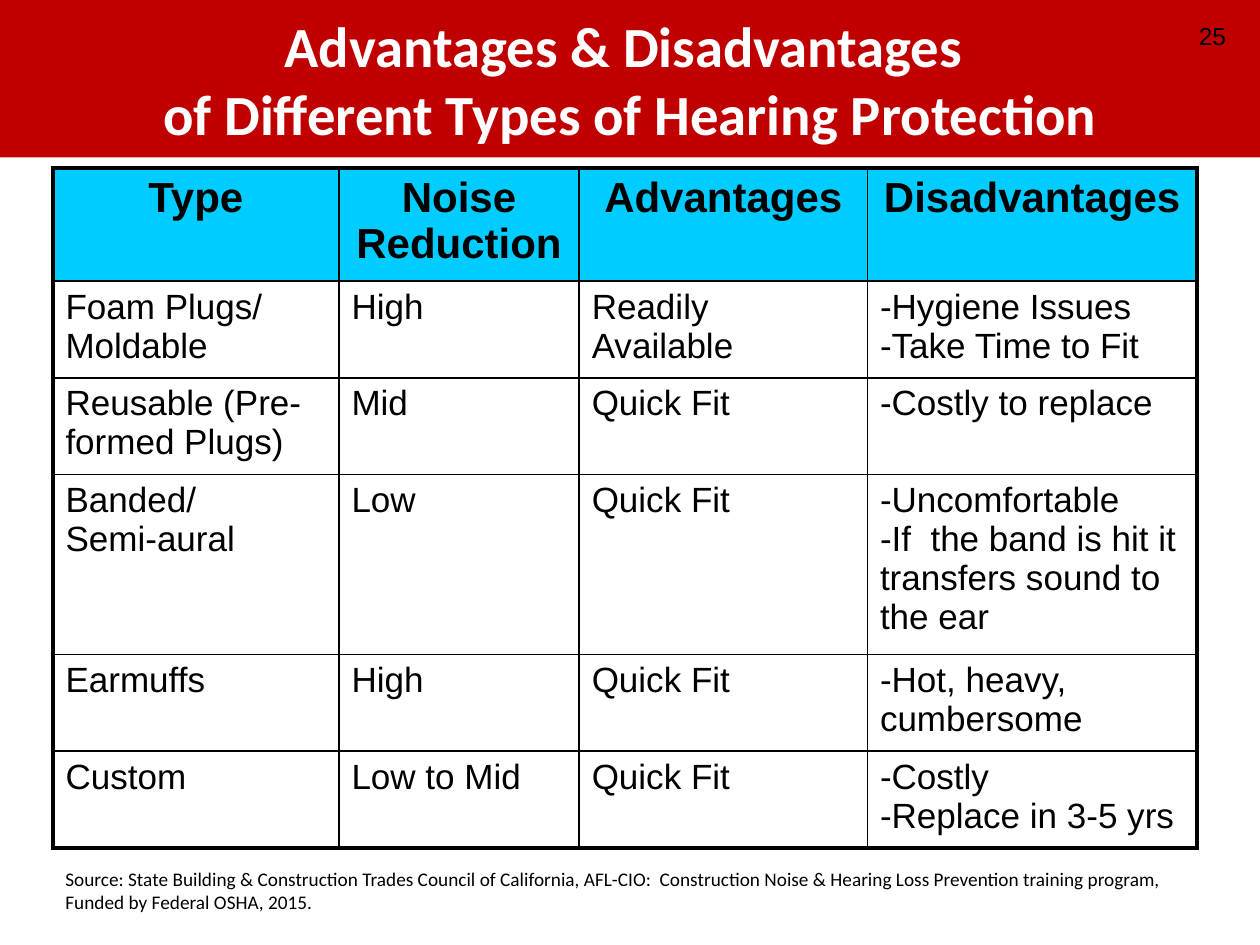
from dataclasses import dataclass

from lxml import etree
from pptx import Presentation
from pptx import util as u
from pptx.dml.color import RGBColor
from pptx.enum import shapes, text
from pptx.oxml.ns import qn

SLIDE_WIDTH = u.Inches(10)
SLIDE_HEIGHT = u.Inches(7.5)


@dataclass(frozen=True)
class Theme:
    banner: str = "C00000"
    header: str = "00CCFF"
    ink: str = "000000"
    light: str = "FFFFFF"
    heading_font: str = "Calibri"
    body_font: str = "Arial"
    title_size: float = 32.4
    header_size: float = 24
    body_size: float = 20
    number_size: float = 14
    source_size: float = 11
    outer_line: float = 2.25
    inner_line: float = 1


@dataclass(frozen=True)
class Box:
    left: float
    top: float
    width: float
    height: float

    def place(self) -> tuple[int, int, int, int]:
        return (
            int(self.left * SLIDE_WIDTH),
            int(self.top * SLIDE_HEIGHT),
            int(self.width * SLIDE_WIDTH),
            int(self.height * SLIDE_HEIGHT),
        )


@dataclass(frozen=True)
class Protection:
    kind: str
    noise_reduction: str
    advantages: str
    disadvantages: str

    def cells(self) -> tuple[str, str, str, str]:
        return self.kind, self.noise_reduction, self.advantages, self.disadvantages


THEME = Theme()
BANNER_BOX = Box(0, 0, 1, 0.1667)
TABLE_BOX = Box(0.042, 0.1776, 0.908, 0.72)
SOURCE_BOX = Box(0.042, 0.911, 0.917, 0.0627)
NUMBER_BOX = Box(0.75, 0.0107, 0.233, 0.0533)
COLUMN_SHARES = (0.25, 0.21, 0.252, 0.288)
ROW_SHARES = (0.1664, 0.1423, 0.1423, 0.2644, 0.1423, 0.1423)
TITLE = "Advantages & Disadvantages \nof Different Types of Hearing Protection"
SOURCE = (
    "Source: State Building & Construction Trades Council of California, AFL-CIO:  "
    "Construction Noise & Hearing Loss Prevention training program, "
    "Funded by Federal OSHA, 2015."
)
HEADINGS = Protection("Type", "Noise Reduction", "Advantages", "Disadvantages")
PROTECTIONS = (
    Protection("Foam Plugs/ Moldable", "High", "Readily Available",
               "-Hygiene Issues\n-Take Time to Fit"),
    Protection("Reusable (Pre-formed Plugs)", "Mid", "Quick Fit", "-Costly to replace"),
    Protection("Banded/\nSemi-aural", "Low", "Quick Fit",
               "-Uncomfortable\n-If  the band is hit it transfers sound to the ear"),
    Protection("Earmuffs", "High", "Quick Fit", "-Hot, heavy, cumbersome"),
    Protection("Custom", "Low to Mid", "Quick Fit", "-Costly\n-Replace in 3-5 yrs"),
)


def write(frame, words: str, *, size: float, font: str = THEME.body_font,
          color: str = THEME.ink, bold: bool = False,
          align=text.PP_ALIGN.LEFT, anchor=None) -> None:
    frame.word_wrap = True
    if anchor is not None:
        frame.vertical_anchor = anchor
    paragraph = frame.paragraphs[0]
    paragraph.text = words
    paragraph.alignment = align
    for run in paragraph.runs:
        run.font.name = font
        run.font.size = u.Pt(size)
        run.font.bold = bold
        run.font.color.rgb = RGBColor.from_string(color)


def add_banner(slide) -> None:
    banner = slide.shapes.add_shape(shapes.MSO_SHAPE.RECTANGLE, *BANNER_BOX.place())
    banner.shadow.inherit = False
    banner.fill.solid()
    banner.fill.fore_color.rgb = RGBColor.from_string(THEME.banner)
    banner.line.fill.background()
    write(banner.text_frame, TITLE, size=THEME.title_size, font=THEME.heading_font,
          color=THEME.light, bold=True, align=text.PP_ALIGN.CENTER,
          anchor=text.MSO_ANCHOR.MIDDLE)


def add_text(slide, box: Box, words: str, **style) -> None:
    write(slide.shapes.add_textbox(*box.place()).text_frame, words, **style)


def set_borders(cell, outer_sides: dict[str, bool]) -> None:
    properties = cell._tc.get_or_add_tcPr()
    for position, (side, outer) in enumerate(outer_sides.items()):
        points = THEME.outer_line if outer else THEME.inner_line
        line = etree.Element(qn(f"a:ln{side}"), w=str(u.Pt(points)))
        fill = etree.SubElement(line, qn("a:solidFill"))
        etree.SubElement(fill, qn("a:srgbClr"), val=THEME.ink)
        properties.insert(position, line)


def add_protection_table(slide) -> None:
    rows = (HEADINGS, *PROTECTIONS)
    last_row, last_column = len(rows) - 1, len(COLUMN_SHARES) - 1
    place = TABLE_BOX.place()
    table = slide.shapes.add_table(len(rows), len(COLUMN_SHARES), *place).table
    table.first_row = table.horz_banding = False
    for column, share in zip(table.columns, COLUMN_SHARES):
        column.width = int(place[2] * share)
    for row, share in zip(table.rows, ROW_SHARES):
        row.height = int(place[3] * share)
    for row_index, protection in enumerate(rows):
        heading = row_index == 0
        for column_index, words in enumerate(protection.cells()):
            cell = table.cell(row_index, column_index)
            if heading:
                cell.fill.solid()
                cell.fill.fore_color.rgb = RGBColor.from_string(THEME.header)
            else:
                cell.fill.background()
            set_borders(cell, {
                "L": column_index == 0,
                "R": column_index == last_column,
                "T": heading,
                "B": row_index == last_row,
            })
            write(cell.text_frame, words, bold=heading,
                  size=THEME.header_size if heading else THEME.body_size,
                  align=text.PP_ALIGN.CENTER if heading else text.PP_ALIGN.LEFT)


def main() -> None:
    presentation = Presentation()
    presentation.slide_width = SLIDE_WIDTH
    presentation.slide_height = SLIDE_HEIGHT
    slide = presentation.slides.add_slide(presentation.slide_layouts[6])
    add_banner(slide)
    add_protection_table(slide)
    add_text(slide, SOURCE_BOX, SOURCE, size=THEME.source_size, font=THEME.heading_font)
    add_text(slide, NUMBER_BOX, "25", size=THEME.number_size,
             align=text.PP_ALIGN.RIGHT, anchor=text.MSO_ANCHOR.MIDDLE)
    presentation.save("out.pptx")


if __name__ == "__main__":
    main()
